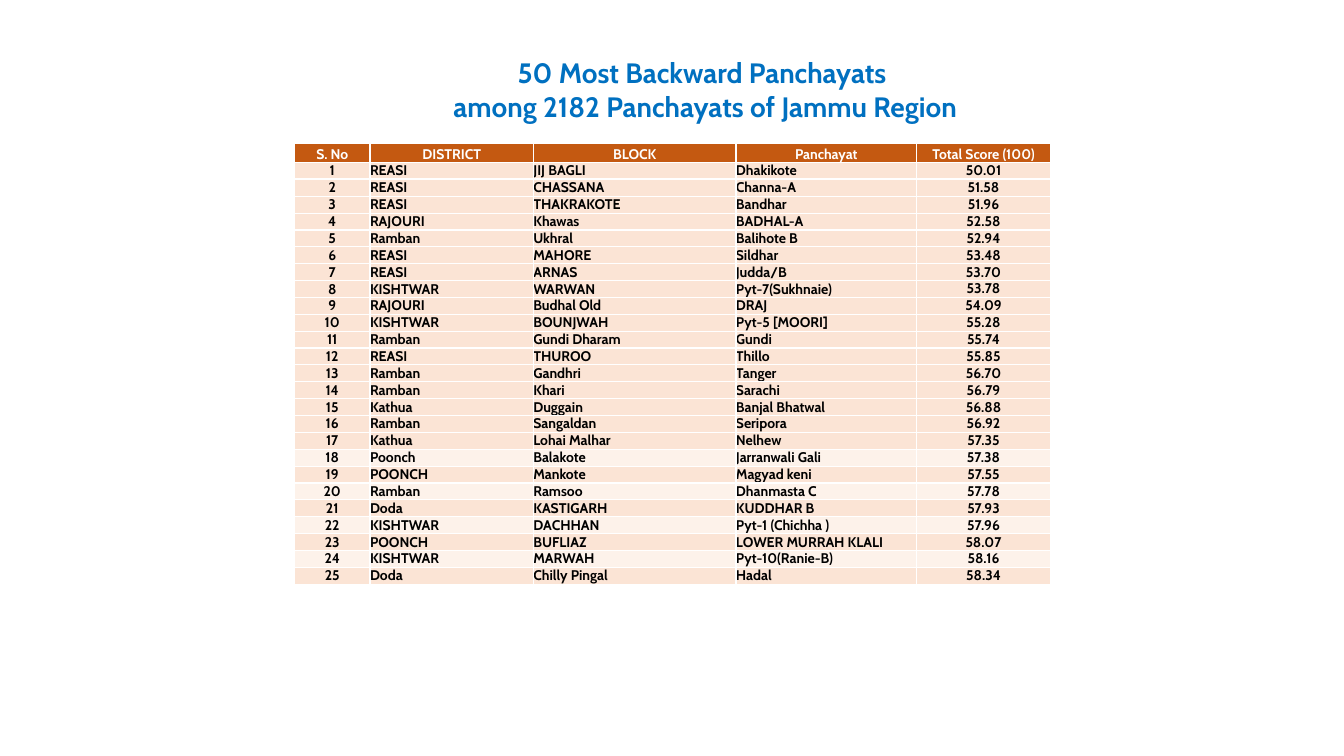
from dataclasses import dataclass

import pptx
import pptx.dml.color
import pptx.enum.text
import pptx.oxml
import pptx.oxml.ns
import pptx.util

Inches = pptx.util.Inches
Pt = pptx.util.Pt
RGBColor = pptx.dml.color.RGBColor
ALIGN = pptx.enum.text.PP_ALIGN
ANCHOR = pptx.enum.text.MSO_ANCHOR

TITLE = "50 Most Backward Panchayats \namong 2182 Panchayats of Jammu Region"
HEADINGS = ("S. No", "DISTRICT", "BLOCK", "Panchayat", "Total Score (100)")
COLUMN_WIDTHS = (0.75, 1.62, 2.01, 1.79, 1.33)
CENTRED_COLUMNS = (0, 4)
SCORE_COLUMN = 4
HEADER_HEIGHT = 0.18
TABLE_HEIGHT = 4.37
FIRST_BANDED = 18
PANCHAYATS = (
    ("REASI", "JIJ BAGLI", "Dhakikote", 50.01),
    ("REASI", "CHASSANA", "Channa-A", 51.58),
    ("REASI", "THAKRAKOTE", "Bandhar", 51.96),
    ("RAJOURI", "Khawas", "BADHAL-A", 52.58),
    ("Ramban", "Ukhral", "Balihote B", 52.94),
    ("REASI", "MAHORE", "Sildhar", 53.48),
    ("REASI", "ARNAS", "Judda/B", 53.70),
    ("KISHTWAR", "WARWAN", "Pyt-7(Sukhnaie)", 53.78),
    ("RAJOURI", "Budhal Old", "DRAJ", 54.09),
    ("KISHTWAR", "BOUNJWAH", "Pyt-5 [MOORI]", 55.28),
    ("Ramban", "Gundi Dharam", "Gundi", 55.74),
    ("REASI", "THUROO", "Thillo", 55.85),
    ("Ramban", "Gandhri", "Tanger", 56.70),
    ("Ramban", "Khari", "Sarachi", 56.79),
    ("Kathua", "Duggain", "Banjal Bhatwal", 56.88),
    ("Ramban", "Sangaldan", "Seripora", 56.92),
    ("Kathua", "Lohai Malhar", "Nelhew", 57.35),
    ("Poonch", "Balakote", "Jarranwali Gali", 57.38),
    ("POONCH", "Mankote", "Magyad keni", 57.55),
    ("Ramban", "Ramsoo", "Dhanmasta C", 57.78),
    ("Doda", "KASTIGARH", "KUDDHAR B", 57.93),
    ("KISHTWAR", "DACHHAN", "Pyt-1 (Chichha )", 57.96),
    ("POONCH", "BUFLIAZ", "LOWER MURRAH KLALI", 58.07),
    ("KISHTWAR", "MARWAH", "Pyt-10(Ranie-B)", 58.16),
    ("Doda", "Chilly Pingal", "Hadal", 58.34),
)


@dataclass(frozen=True)
class Theme:
    """Colours, font and type sizes of the slide."""

    font: str = "Cabin"
    title_size: int = 20
    table_size: int = 10
    title: str = "0070C0"
    header: str = "C45911"
    header_text: str = "FFFFFF"
    body_text: str = "000000"
    band: str = "FBE4D5"
    pale_band: str = "FDF2EA"
    rule: str = "FFFFFF"
    rule_width: float = 1.5


class SlideBuilder:
    """Draws styled elements on the current slide."""

    def __init__(self, slide, theme):
        self.slide = slide
        self.theme = theme

    def style(self, paragraph, size, colour, alignment):
        """Format a paragraph and its runs."""
        paragraph.alignment = alignment
        for run in paragraph.runs:
            run.font.name = self.theme.font
            run.font.size = Pt(size)
            run.font.bold = True
            run.font.color.rgb = RGBColor.from_string(colour)

    def heading(self, text, left, top, width, height):
        """Add the centred slide title."""
        title = self.slide.shapes.add_textbox(
            Inches(left), Inches(top), Inches(width), Inches(height))
        frame = title.text_frame
        frame.word_wrap = True
        frame.auto_size = pptx.enum.text.MSO_AUTO_SIZE.SHAPE_TO_FIT_TEXT
        frame.vertical_anchor = ANCHOR.MIDDLE
        frame.margin_left = frame.margin_right = Inches(0.05)
        frame.margin_top = frame.margin_bottom = Inches(0.05)
        frame.text = text
        for paragraph in frame.paragraphs:
            self.style(paragraph, self.theme.title_size, self.theme.title, ALIGN.CENTER)

    def border(self, cell, *sides):
        """Rule the given sides of a cell."""
        for position, side in enumerate(sides):
            line = pptx.oxml.parse_xml(
                f'<a:{side} {pptx.oxml.ns.nsdecls("a")} w="{Pt(self.theme.rule_width)}">'
                f'<a:solidFill><a:srgbClr val="{self.theme.rule}"/></a:solidFill></a:{side}>')
            cell._tc.get_or_add_tcPr().insert(position, line)

    def cell(self, cell, text, fill, colour, alignment, anchor):
        """Fill one table cell and return its paragraph."""
        cell.margin_left = cell.margin_right = cell.margin_top = cell.margin_bottom = 0
        cell.vertical_anchor = anchor
        cell.fill.solid()
        cell.fill.fore_color.rgb = RGBColor.from_string(fill)
        cell.text_frame.text = text
        paragraph = cell.text_frame.paragraphs[0]
        self.style(paragraph, self.theme.table_size, colour, alignment)
        return paragraph

    def ranking(self, panchayats, left, top):
        """Add the table of panchayats ranked by score."""
        theme = self.theme
        table = self.slide.shapes.add_table(
            len(panchayats) + 1, len(HEADINGS), Inches(left), Inches(top),
            Inches(sum(COLUMN_WIDTHS)), Inches(TABLE_HEIGHT)).table
        for column, width in zip(table.columns, COLUMN_WIDTHS):
            column.width = Inches(width)
        body_height = (TABLE_HEIGHT - HEADER_HEIGHT) / len(panchayats)
        for number, row in enumerate(table.rows):
            row.height = Inches(body_height if number else HEADER_HEIGHT)

        for column, label in enumerate(HEADINGS):
            header = table.cell(0, column)
            paragraph = self.cell(header, label, theme.header, theme.header_text,
                                  ALIGN.CENTER, ANCHOR.TOP)
            paragraph.line_spacing = 1.15
            self.border(header, "lnT", "lnB")
            self.border(table.cell(1, column), "lnT")

        for rank, (district, block, panchayat, score) in enumerate(panchayats, 1):
            pale = rank >= FIRST_BANDED and rank % 2 == 0
            entries = (str(rank), district, block, panchayat, f"{score:.2f}")
            for column, entry in enumerate(entries):
                low = column == SCORE_COLUMN and district == "KISHTWAR"
                self.cell(table.cell(rank, column), entry,
                          theme.pale_band if pale else theme.band, theme.body_text,
                          ALIGN.CENTER if column in CENTRED_COLUMNS else ALIGN.LEFT,
                          ANCHOR.BOTTOM if low else ANCHOR.MIDDLE)


def main():
    """Build and save the slide."""
    presentation = pptx.Presentation()
    presentation.slide_width = Inches(13.33)
    presentation.slide_height = Inches(7.5)
    slide = presentation.slides.add_slide(presentation.slide_layouts[6])
    builder = SlideBuilder(slide, Theme())
    builder.heading(TITLE, 2.38, 0.5, 9.23, 0.77)
    builder.ranking(PANCHAYATS, 2.92, 1.42)
    presentation.save("out.pptx")


if __name__ == "__main__":
    main()
